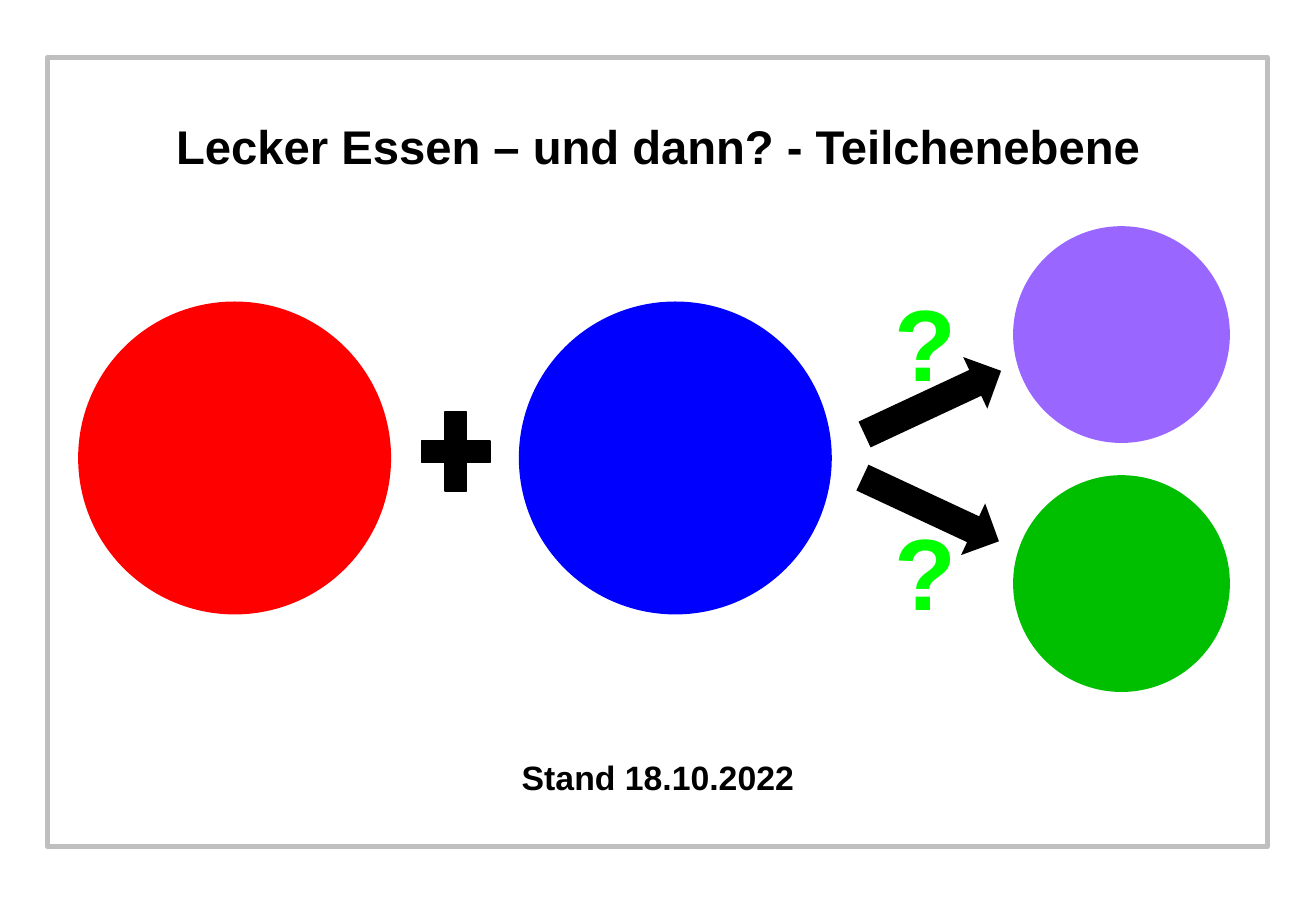
"""Build the title slide with particle circles, a plus sign and two questioned arrows."""
from pptx import Presentation
from pptx.dml.color import RGBColor
from pptx.enum import shapes, text
from pptx.util import Pt

Kind = shapes.MSO_SHAPE


def write(box, words, size, color="000000", wrap=True):
    frame = box.text_frame
    frame.word_wrap = wrap
    frame.auto_size = text.MSO_AUTO_SIZE.NONE
    frame.vertical_anchor = text.MSO_ANCHOR.MIDDLE
    para = frame.paragraphs[0]
    para.alignment = text.PP_ALIGN.CENTER
    run = para.add_run()
    run.text = words
    run.font.name, run.font.size, run.font.bold = "Arial", Pt(size), True
    run.font.color.rgb = RGBColor.from_string(color)


def draw(kind, left, top, width, height, fill=None, line=None, weight=1):
    shape = slide.shapes.add_shape(kind, Pt(left), Pt(top), Pt(width), Pt(height))
    shape.shadow.inherit = False
    if fill:
        shape.fill.solid()
        shape.fill.fore_color.rgb = RGBColor.from_string(fill)
    else:
        shape.fill.background()
    if line:
        shape.line.color.rgb = RGBColor.from_string(line)
        shape.line.width = Pt(weight)
    else:
        shape.line.fill.background()
    return shape


deck = Presentation()
deck.slide_width, deck.slide_height = Pt(780), Pt(540)
slide = deck.slides.add_slide(deck.slide_layouts[5])

draw(Kind.RECTANGLE, 28.2, 34, 723, 468, line="BFBFBF", weight=3)

title = slide.shapes.title
title.left, title.top, title.width, title.height = Pt(57), Pt(51), Pt(666), Pt(70.5)
write(title, "Lecker Essen – und dann? - Teilchenebene", 28)

stand = slide.shapes.add_textbox(Pt(106.5), Pt(439.5), Pt(567), Pt(42.5))
write(stand, "Stand 18.10.2022", 20)

for left, top, size, color in [
    (46.8, 179.2, 184.5, "FF0000"),
    (308, 179.2, 184.5, "0000FF"),
    (601, 282.2, 127.5, "00BF00"),
    (601, 134.6, 127.5, "9966FF"),
]:
    draw(Kind.FLOWCHART_CONNECTOR, left, top, size, size, color, color)

draw(Kind.MATH_PLUS, 242.6, 236, 55, 63.4, "000000", "000000")

for left, top, turn, ask in [(508.3, 221.8, 335, 162), (507, 285.1, 25, 298)]:
    arrow = draw(Kind.RIGHT_ARROW, left, top, 89.3, 33.8, "000000")
    arrow.rotation = turn
    mark = slide.shapes.add_textbox(Pt(522.7), Pt(ask), Pt(52), Pt(80))
    write(mark, "?", 60, "00FF00", wrap=False)

deck.save("out.pptx")
